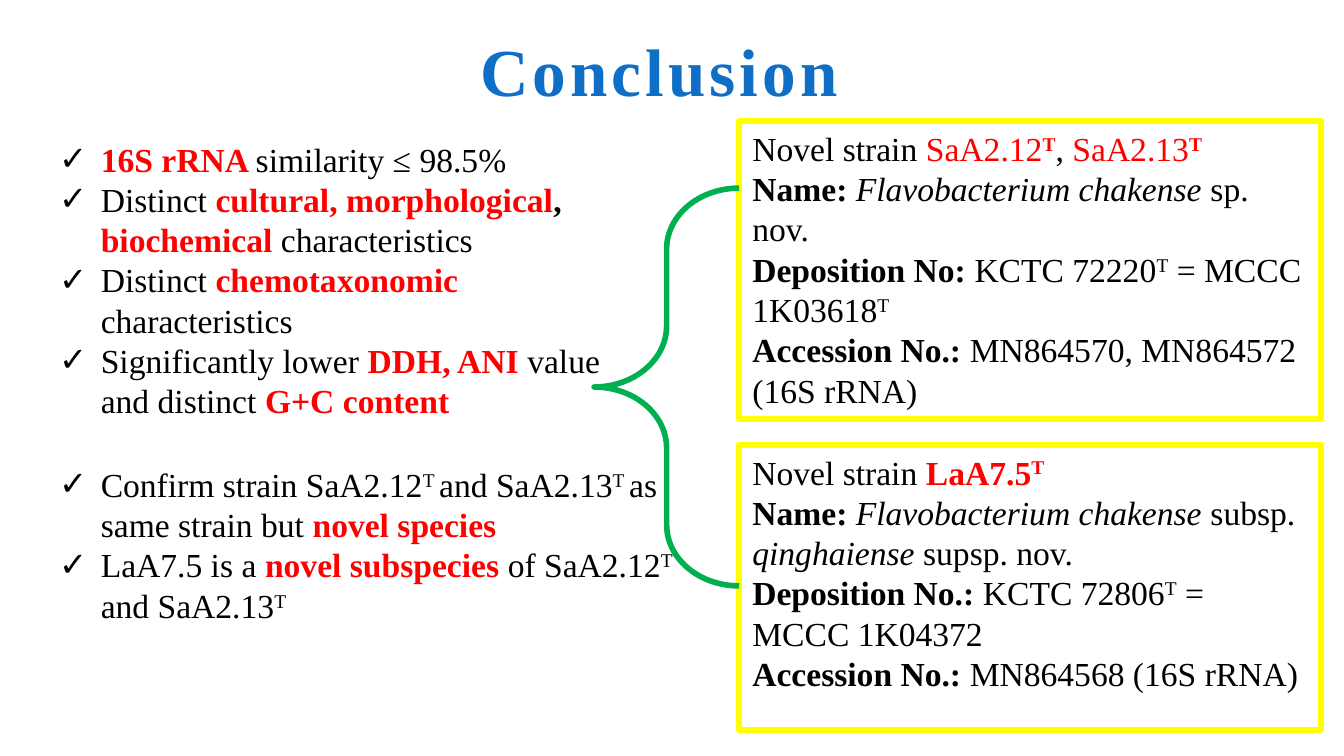
"""Build the Conclusion slide: two checklists braced to two strain boxes."""
from lxml import etree
from pptx import Presentation
from pptx import util as u
from pptx.dml.color import RGBColor
from pptx.enum import shapes, text
from pptx.oxml.ns import qn

BLUE = RGBColor(0x0F, 0x6F, 0xC6)
RED = RGBColor(0xFF, 0, 0)
BLACK = RGBColor(0, 0, 0)
YELLOW = RGBColor(0xFF, 0xFF, 0)
GREEN = RGBColor(0, 0xB0, 0x50)
FONT = "Times New Roman"

STYLES = {
    "": {},
    "b": {"bold": True},
    "i": {"italic": True},
    "r": {"color": RED},
    "B": {"bold": True, "color": RED},
    "^": {"raised": True},
    "^B": {"bold": True, "color": RED, "raised": True},
}

EVIDENCE = [
    [("16S rRNA ", "B"), ("similarity ≤ 98.5%", "")],
    [("Distinct ", ""), ("cultural, morphological", "B"), (", ", "b"),
     ("biochemical ", "B"), ("characteristics", "")],
    [("Distinct", ""), (" chemotaxonomic ", "B"), ("characteristics", "")],
    [("Significantly lower ", ""), ("DDH, ANI ", "B"),
     ("value and distinct ", ""), ("G+C content", "B")],
]
VERDICT = [
    [("Confirm strain SaA2.12", ""), ("T ", "^"), ("and SaA2.13", ""),
     ("T ", "^"), ("as same strain but ", ""), ("novel species", "B")],
    [("LaA7.5 is a ", ""), ("novel subspecies ", "B"), ("of SaA2.12", ""),
     ("T ", "^"), ("and SaA2.13", ""), ("T", "^")],
]
SPECIES = [
    [("Novel strain ", ""), ("SaA2.12", "r"), ("T", "^B"), (", ", ""),
     ("SaA2.13", "r"), ("T", "^B")],
    [("Name: ", "b"), ("Flavobacterium chakense ", "i"), ("sp. nov.", "")],
    [("Deposition No: ", "b"), ("KCTC 72220", ""), ("T", "^"),
     (" = MCCC 1K03618", ""), ("T", "^")],
    [("Accession No.: ", "b"), ("MN864570, MN864572 (16S rRNA)", "")],
]
SUBSPECIES = [
    [("Novel strain ", ""), ("LaA7.5", "B"), ("T", "^B")],
    [("Name: ", "b"), ("Flavobacterium chakense ", "i"), ("subsp. ", ""),
     ("qinghaiense ", "i"), ("supsp. nov.", "")],
    [("Deposition No.: ", "b"), ("KCTC 72806", ""), ("T", "^"),
     (" = MCCC 1K04372", "")],
    [("Accession No.: ", "b"), ("MN864568 (16S rRNA)", "")],
]
LISTS = [(EVIDENCE, (0.34, 0.98, 4.49, 2.22)),
         (VERDICT, (0.34, 3.4, 5.08, 1.31))]
BOXES = [(SPECIES, (5.5, 0.9, 4.33, 2.22)),
         (SUBSPECIES, (5.5, 3.31, 4.33, 2.12))]


def place(sp, at):
    for name, value in zip(("left", "top", "width", "height"), at):
        setattr(sp, name, u.Inches(value))


def add_run(p, words, size=18, color=BLACK, raised=False, bold=False, italic=False):
    r = p.add_run()
    r.text = words
    formats = {"name": FONT, "size": u.Pt(size), "bold": bold, "italic": italic}
    for name, value in formats.items():
        setattr(r.font, name, value)
    r.font.color.rgb = color
    if raised:
        r.font._element.set("baseline", "30000")
    return r


def add_check(p):
    pPr = p._p.get_or_add_pPr()
    pPr.set("marL", str(u.Inches(0.31)))
    pPr.set("indent", str(-u.Inches(0.31)))
    clr = etree.SubElement(pPr, qn("a:buClr"))
    etree.SubElement(clr, qn("a:srgbClr"), val=str(BLACK))
    etree.SubElement(pPr, qn("a:buFont"), typeface="Arial")
    etree.SubElement(pPr, qn("a:buChar"), char="✓")


def write(tf, paragraphs, checked=False):
    tf.word_wrap = True
    tf.auto_size = text.MSO_AUTO_SIZE.NONE
    tf.vertical_anchor = text.MSO_ANCHOR.TOP
    for i, runs in enumerate(paragraphs):
        p = tf.add_paragraph() if i else tf.paragraphs[0]
        p.alignment = text.PP_ALIGN.LEFT
        p.space_before = u.Pt(0)
        if checked:
            add_check(p)
        for words, style in runs:
            add_run(p, words, **STYLES[style])


def add_outline(s, kind, at, color):
    sp = s.shapes.add_shape(kind, *map(u.Inches, at))
    sp.shadow.inherit = False
    sp.fill.background()
    sp.line.color.rgb = color
    sp.line.width = u.Pt(3)
    return sp


def main():
    prs = Presentation()
    prs.slide_width = u.Inches(10)
    prs.slide_height = prs.slide_width * 9 // 16
    s = prs.slides.add_slide(prs.slide_layouts[3])
    title, *bodies = s.placeholders

    place(title, (0.56, 0.15, 8.69, 0.73))
    tf = title.text_frame
    tf.vertical_anchor = text.MSO_ANCHOR.MIDDLE
    tf.auto_size = text.MSO_AUTO_SIZE.NONE
    for side, inset in {"left": 0.08, "top": 0.04, "right": 0.08, "bottom": 0.04}.items():
        setattr(tf, f"margin_{side}", u.Inches(inset))
    p = tf.paragraphs[0]
    p.alignment = text.PP_ALIGN.CENTER
    r = add_run(p, "Conclusion", 36, BLUE, bold=True)
    r.font._element.set("spc", "220")

    for sp, (paragraphs, at) in zip(bodies, LISTS):
        place(sp, at)
        write(sp.text_frame, paragraphs, checked=True)

    for paragraphs, at in BOXES:
        sp = add_outline(s, shapes.MSO_SHAPE.RECTANGLE, at, YELLOW)
        write(sp.text_frame, paragraphs)

    brace = add_outline(s, shapes.MSO_SHAPE.LEFT_BRACE, (4.42, 1.4, 1.08, 2.96), GREEN)
    brace.adjustments[0], brace.adjustments[1] = 0.42, 0.5

    prs.save("out.pptx")


if __name__ == "__main__":
    main()
